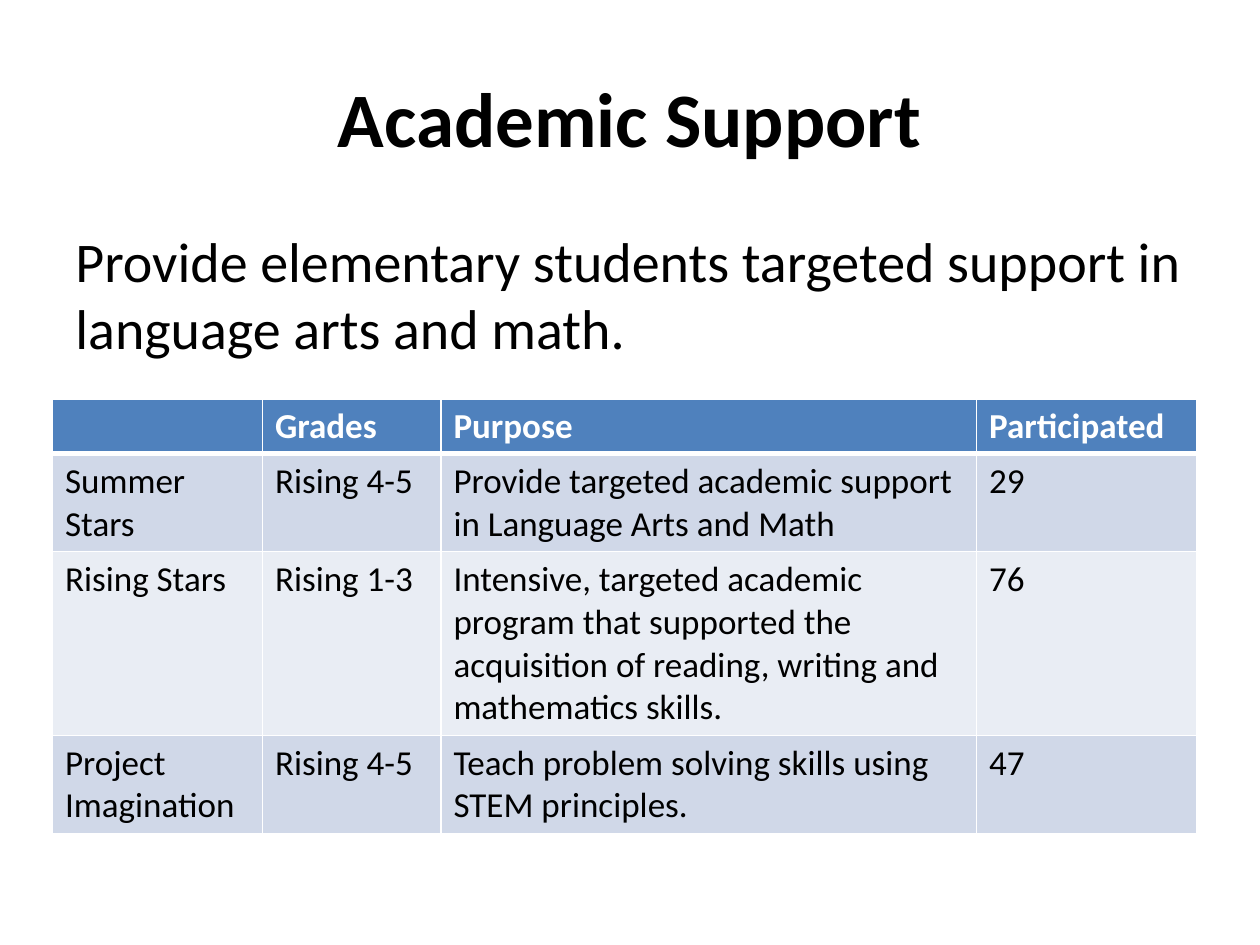
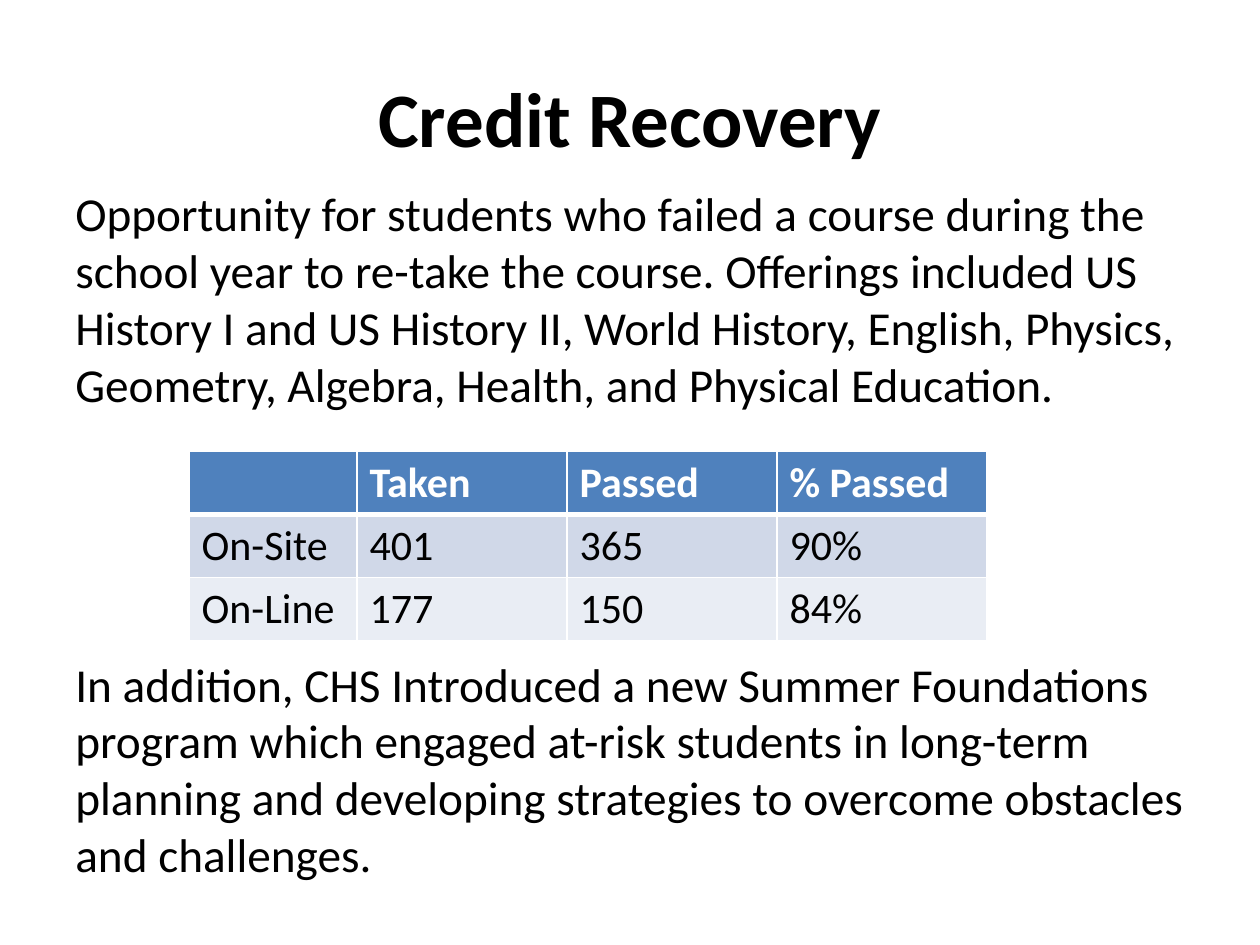
from lxml.etree import SubElement
from pptx import Presentation
from pptx.dml.color import RGBColor
from pptx.enum.text import MSO_ANCHOR, PP_ALIGN
from pptx.oxml.ns import qn
from pptx.util import Pt

BLACK = RGBColor(0x00, 0x00, 0x00)
WHITE = RGBColor(0xFF, 0xFF, 0xFF)
HEADER_BLUE = RGBColor(0x4F, 0x81, 0xBD)
BANDS = (RGBColor(0xD0, 0xD8, 0xE8), RGBColor(0xE9, 0xED, 0xF4))
FONT = "Calibri"
MARGIN = 36
TEXT_WIDTH = 648
THIN, THICK = 1, 3


def style_runs(paragraph, size, color=BLACK, bold=False):
    """Apply the shared font to every run of a paragraph."""
    for run in paragraph.runs:
        run.font.name = FONT
        run.font.size = Pt(size)
        run.font.bold = bold
        run.font.color.rgb = color


def add_text_box(slide, top, height):
    """Add a wrapping text box between the slide margins."""
    shape = slide.shapes.add_textbox(Pt(MARGIN), Pt(top), Pt(TEXT_WIDTH), Pt(height))
    shape.text_frame.word_wrap = True
    return shape.text_frame


def add_title(slide, text):
    """Add the centred bold slide title."""
    text_frame = add_text_box(slide, 21.6, 90)
    text_frame.vertical_anchor = MSO_ANCHOR.MIDDLE
    text_frame.text = text
    paragraph = text_frame.paragraphs[0]
    paragraph.alignment = PP_ALIGN.CENTER
    style_runs(paragraph, 44, bold=True)


def add_body(slide, top, height, paragraphs, size, gap=0):
    """Add body paragraphs separated by a gap."""
    text_frame = add_text_box(slide, top, height)
    text_frame.margin_right = 0
    text_frame.text = "\n".join(paragraphs)
    for index, paragraph in enumerate(text_frame.paragraphs):
        paragraph.space_before = Pt(gap if index else 0)
        style_runs(paragraph, size)


def set_borders(cell, top, bottom):
    """Draw white borders around a cell."""
    properties = cell._tc.get_or_add_tcPr()
    for side, width in (("L", THIN), ("R", THIN), ("T", top), ("B", bottom)):
        line = SubElement(properties, qn(f"a:ln{side}"), w=str(Pt(width)))
        fill = SubElement(line, qn("a:solidFill"))
        SubElement(fill, qn("a:srgbClr"), val=str(WHITE))


def add_banded_table(slide, left, top, column_widths, row_heights, rows, size):
    """Add a table with a blue header and alternating row bands."""
    frame = slide.shapes.add_table(
        len(rows), len(column_widths), Pt(left), Pt(top),
        Pt(sum(column_widths)), Pt(sum(row_heights)))
    table = frame.table
    for column, width in zip(table.columns, column_widths):
        column.width = Pt(width)
    for row_index, (row, height, texts) in enumerate(zip(table.rows, row_heights, rows)):
        row.height = Pt(height)
        is_header = row_index == 0
        for cell, text in zip(row.cells, texts):
            set_borders(cell, THICK if row_index == 1 else THIN,
                        THICK if is_header else THIN)
            cell.fill.solid()
            cell.fill.fore_color.rgb = HEADER_BLUE if is_header else BANDS[(row_index - 1) % 2]
            cell.text = text
            style_runs(cell.text_frame.paragraphs[0], size,
                       WHITE if is_header else BLACK, is_header)


def add_slide(presentation, title):
    """Add a blank slide with its title."""
    slide = presentation.slides.add_slide(presentation.slide_layouts[6])
    add_title(slide, title)
    return slide


def build_academic_support(presentation):
    """Build the slide on elementary programs."""
    slide = add_slide(presentation, "Academic Support")
    add_body(slide, 126, 356.4, [
        "Provide elementary students targeted support in language arts and math.",
    ], 32)
    add_banded_table(slide, 30, 228, (120, 102, 306, 126), (31, 56, 105, 56), (
        ("", "Grades", "Purpose", "Participated"),
        ("Summer Stars", "Rising 4-5",
         "Provide targeted academic support in Language Arts and Math", "29"),
        ("Rising Stars", "Rising 1-3",
         "Intensive, targeted academic program that supported the acquisition "
         "of reading, writing and mathematics skills.", "76"),
        ("Project Imagination", "Rising 4-5",
         "Teach problem solving skills using STEM principles.", "47"),
    ), 20)


def build_credit_recovery(presentation):
    """Build the slide on repeated courses."""
    slide = add_slide(presentation, "Credit Recovery")
    add_body(slide, 102, 420, [
        "Opportunity for students who failed a course during the school year to "
        "re-take the course. Offerings included US History I and US History II, "
        "World History, English, Physics, Geometry, Algebra, Health, and "
        "Physical Education.",
        "In addition, CHS Introduced a new Summer Foundations program which "
        "engaged at-risk students in long-term planning and developing "
        "strategies to overcome obstacles and challenges.",
    ], 27, gap=139)
    add_banded_table(slide, 108, 258, (96, 120, 120, 120), (36, 36, 36), (
        ("", "Taken", "Passed", "% Passed"),
        ("On-Site", "401", "365", "90%"),
        ("On-Line", "177", "150", "84%"),
    ), 24)


def main():
    """Build and save the presentation."""
    presentation = Presentation()
    presentation.slide_width = Pt(720)
    presentation.slide_height = Pt(540)
    build_academic_support(presentation)
    build_credit_recovery(presentation)
    presentation.save("out.pptx")


if __name__ == "__main__":
    main()
